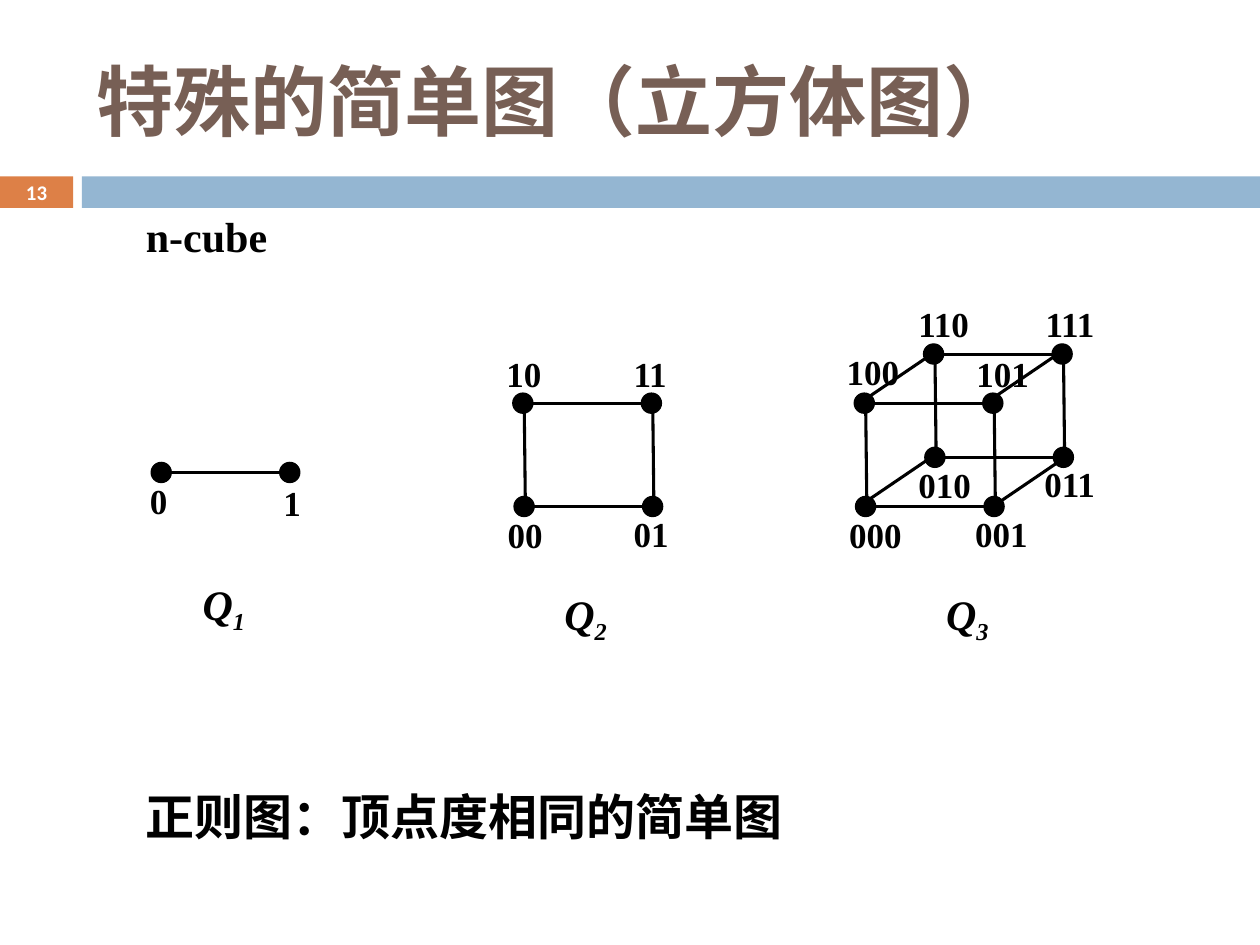
import pptx
import pptx.dml.color
import pptx.enum.shapes
import pptx.enum.text
import pptx.oxml
import pptx.util

Inches = pptx.util.Inches
Pt = pptx.util.Pt
RGBColor = pptx.dml.color.RGBColor
MSO_SHAPE = pptx.enum.shapes.MSO_SHAPE
PP_ALIGN = pptx.enum.text.PP_ALIGN
MSO_ANCHOR = pptx.enum.text.MSO_ANCHOR

BLACK = RGBColor(0x00, 0x00, 0x00)
WHITE = RGBColor(0xFF, 0xFF, 0xFF)
BROWN = RGBColor(0x77, 0x5F, 0x55)
ORANGE = RGBColor(0xDD, 0x80, 0x47)
BLUE = RGBColor(0x94, 0xB6, 0xD2)

SERIF = "Times New Roman"
DOT = 0.16
EDGE = 1.02    # left to right between the dots of a face
HEIGHT = 0.82  # top to bottom between the dots of a face
LEAN = 0.01    # the lower dots sit slightly to the right


def add_run(p, text, size, font, color=BLACK, italic=None):
    r = p.add_run()
    r.text = text
    r.font.size = Pt(size)
    r.font.name = font
    r.font.bold = True
    r.font.italic = italic
    r.font.color.rgb = color
    return r


def add_bar(shapes, x, width, color):
    s = shapes.add_shape(MSO_SHAPE.RECTANGLE, Inches(x), Inches(1.4),
                         Inches(width), Inches(0.25))
    s.shadow.inherit = False
    s.fill.solid()
    s.fill.fore_color.rgb = color
    s.line.fill.background()


def add_text(shapes, box, text, size, font, color=BLACK,
             align=PP_ALIGN.LEFT, anchor=MSO_ANCHOR.TOP):
    tf = shapes.add_textbox(*map(Inches, box)).text_frame
    tf.word_wrap = True
    tf.vertical_anchor = anchor
    p = tf.paragraphs[0]
    p.alignment = align
    add_run(p, text, size, font, color)


def add_dot(shapes, x, y):
    s = shapes.add_shape(MSO_SHAPE.FLOWCHART_CONNECTOR, Inches(x), Inches(y),
                         Inches(DOT), Inches(DOT))
    s.shadow.inherit = False
    s.fill.solid()
    s.fill.fore_color.rgb = BLACK
    s.line.color.rgb = BLACK
    s.line.width = Pt(0.75)


def add_edge(shapes, x1, y1, x2, y2):
    s = shapes.add_connector(pptx.enum.shapes.MSO_CONNECTOR.STRAIGHT,
                             Inches(x1), Inches(y1), Inches(x2), Inches(y2))
    s.line.color.rgb = BLACK
    s.line.width = Pt(1.75)
    pptx.oxml.ns.qn("a:effectLst")
    s._element.spPr.append(pptx.oxml.parse_xml(
        '<a:effectLst xmlns:a="http://schemas.openxmlformats.org/drawingml/2006/main"/>'))


def add_callout(shapes, x, y, width, height):
    """Add an unfilled callout and return its empty paragraph."""
    s = shapes.add_shape(MSO_SHAPE.RECTANGULAR_CALLOUT, Inches(x), Inches(y),
                         Inches(width), Inches(height))
    s.shadow.inherit = False
    s.fill.background()
    s.line.fill.background()
    tf = s.text_frame
    tf.word_wrap = False
    tf.vertical_anchor = MSO_ANCHOR.TOP
    p = tf.paragraphs[0]
    p.alignment = PP_ALIGN.LEFT
    return p


def add_vertex_labels(shapes, labels):
    for text, x, y in labels:
        add_run(add_callout(shapes, x, y, 0.39, 0.31), text, 20, SERIF)


def add_cube_name(shapes, x, y, dimension):
    p = add_callout(shapes, x, y, 0.79, 0.55)
    add_run(p, "Q", 24, SERIF, italic=True)
    r = add_run(p, dimension, 24, SERIF, italic=True)
    r.font._element.set("baseline", "-25000")


def add_segment(shapes, x, y):
    """Two dots joined by a horizontal edge."""
    add_dot(shapes, x, y)
    add_dot(shapes, x + EDGE, y)
    add_edge(shapes, x + DOT, y + DOT / 2, x + EDGE, y + DOT / 2)


def add_face(shapes, x, y):
    """Two segments joined by vertical edges."""
    add_segment(shapes, x, y)
    add_segment(shapes, x + LEAN, y + HEIGHT)
    for left in (x, x + EDGE):
        add_edge(shapes, left + 0.1, y + 0.91, left + 0.09, y + 0.04)


def add_q1(slide):
    shapes = slide.shapes.add_group_shape().shapes
    add_segment(shapes, 1.2, 3.67)
    add_cube_name(shapes, 1.51, 4.54, "1")
    add_vertex_labels(shapes, [("1", 2.15, 3.77), ("0", 1.09, 3.76)])


def add_q2(slide):
    shapes = slide.shapes.add_group_shape().shapes
    add_face(shapes, 4.07, 3.12)
    add_cube_name(shapes, 4.38, 4.62, "2")
    add_vertex_labels(shapes, [("10", 3.92, 2.75), ("11", 4.93, 2.75),
                               ("00", 3.93, 4.03), ("01", 4.93, 4.02)])


def add_q3(slide):
    shapes = slide.shapes.add_group_shape().shapes
    add_face(shapes, 6.78, 3.12)
    add_face(shapes, 7.33, 2.73)
    for x, y in ((6.86, 3.99), (7.88, 4.02), (7.88, 3.16), (6.91, 3.14)):
        add_edge(shapes, x, y, x + 0.53, y - 0.36)
    add_cube_name(shapes, 7.41, 4.62, "3")
    add_vertex_labels(shapes, [("100", 6.62, 2.73), ("101", 7.65, 2.75),
                               ("000", 6.64, 4.03), ("001", 7.64, 4.02),
                               ("110", 7.19, 2.35), ("111", 8.2, 2.35),
                               ("010", 7.19, 3.63), ("011", 8.19, 3.62)])


def main():
    prs = pptx.Presentation()
    prs.slide_width = Inches(10)
    prs.slide_height = Inches(7.5)
    slide = prs.slides.add_slide(prs.slide_layouts[6])
    shapes = slide.shapes

    add_bar(shapes, 0, 0.58, ORANGE)
    add_bar(shapes, 0.65, 9.35, BLUE)
    add_q1(slide)
    add_q2(slide)
    add_q3(slide)
    add_text(shapes, (1.06, 1.62, 1.34, 0.5), "n-cube", 24, SERIF,
             align=PP_ALIGN.JUSTIFY)
    add_text(shapes, (1.06, 6.19, 6.38, 0.5), "正则图：顶点度相同的简单图",
             28, "Arial", align=PP_ALIGN.JUSTIFY)
    add_text(shapes, (0, 1.39, 0.58, 0.27), "13", 11.9, "Calibri", WHITE,
             PP_ALIGN.CENTER, MSO_ANCHOR.MIDDLE)
    add_text(shapes, (0.67, 0.25, 8.92, 1.08), "特殊的简单图（立方体图）",
             44, "Calibri", BROWN, anchor=MSO_ANCHOR.MIDDLE)
    prs.save("out.pptx")


if __name__ == "__main__":
    main()
